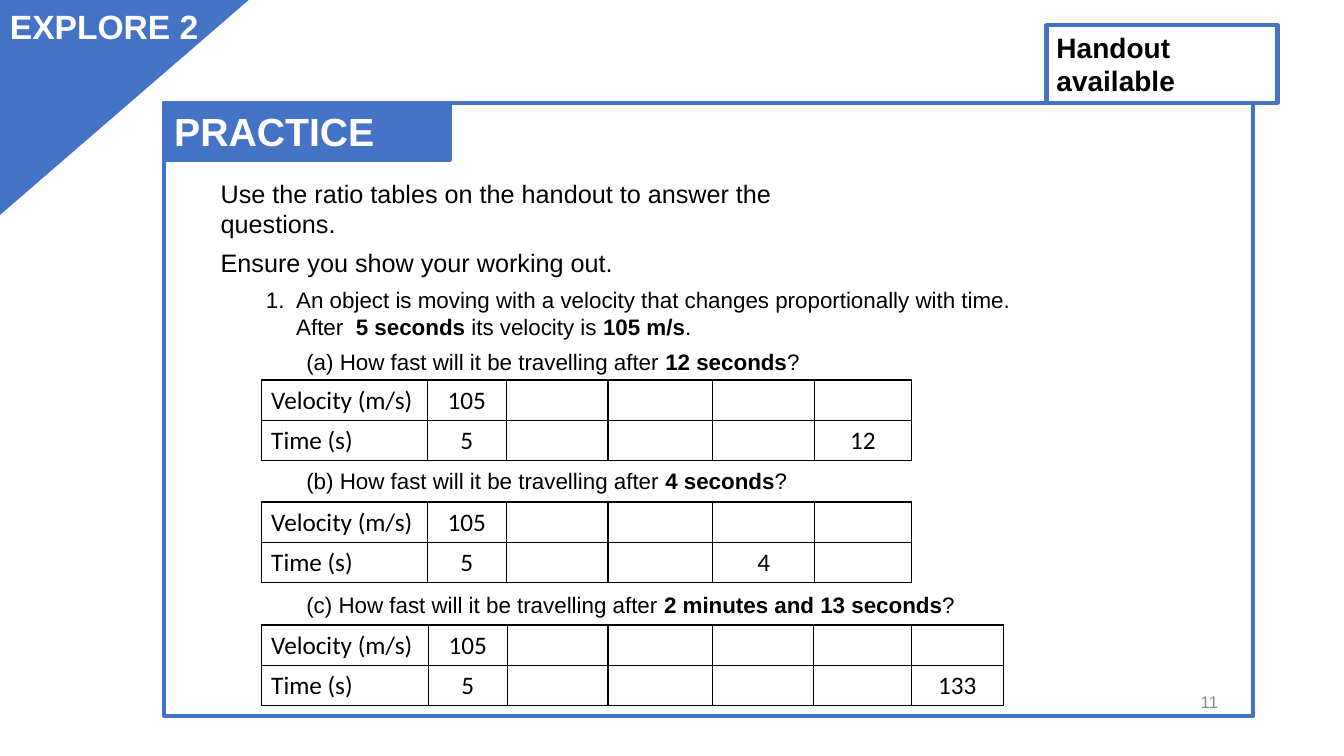
from lxml.etree import SubElement
from pptx import Presentation
from pptx.dml.color import RGBColor
from pptx.enum.shapes import MSO_SHAPE as Preset
from pptx.enum.text import MSO_ANCHOR as Anchor, PP_ALIGN as Align
from pptx.oxml.ns import qn
from pptx.util import Inches, Pt

BLUE, BLACK, WHITE, GREY = "4472C4", "000000", "FFFFFF", "8C8C8C"

CORNER = (-0.03, -0.02, 2.51, 2.17)
HANDOUT = (10.38, 0.25, 2.29, 0.77)
BANNER = (1.63, 1.02, 2.83, 0.57)
FRAME = (1.63, 1.02, 10.8, 6.08)

INTRO = [
    ["Use the ratio tables on the handout to answer the questions."],
    ["Ensure you show your working out."],
]
PROBLEM = [[
    "An object is moving with a velocity that changes proportionally with time. After  ",
    "5 seconds ", "its velocity is ", "105 m/s", ".",
]]
ASK = "How fast will it be travelling after "
SHORT_COLUMNS = [1.65, 0.78, 1.01, 1.04, 1.01, 0.96]
LONG_COLUMNS = [1.66, 0.78, 1, 1.04, 1, 0.97, 0.91]
ROW_LABELS = [("Velocity (m/s)", "105"), ("Time (s)", "5")]
QUESTIONS = [
    {"letter": "(a) ", "time": "12 seconds", "top": 3.4, "table_top": 3.77,
     "columns": SHORT_COLUMNS, "goal": (5, "12")},
    {"letter": "(b) ", "time": "4 seconds", "top": 4.59, "table_top": 4.98,
     "columns": SHORT_COLUMNS, "goal": (4, "4")},
    {"letter": "(c) ", "time": "2 minutes and 13 seconds", "top": 5.82, "table_top": 6.2,
     "columns": LONG_COLUMNS, "goal": (6, "133")},
]
TABLE_LEFT, ROW_HEIGHT = 2.59, 0.4


def color(value):
    return RGBColor.from_string(value)


def place(area):
    return [Inches(length) for length in area]


def style(span, size, ink, bold=False, font="Arial"):
    span.font.name = font
    span.font.size = Pt(size)
    span.font.bold = bold
    span.font.color.rgb = color(ink)


def write(box, paragraphs, size, ink=BLACK, bold=False, after=0, align=Align.LEFT):
    frame = box.text_frame
    frame.word_wrap = True
    for number, parts in enumerate(paragraphs):
        para = frame.add_paragraph() if number else frame.paragraphs[0]
        para.alignment = align
        para.space_after = Pt(after)
        for index, part in enumerate(parts):
            for line_number, line in enumerate(part.split("\n")):
                if line_number:
                    para.add_line_break()
                span = para.add_run()
                span.text = line
                style(span, size, ink, bold or index % 2 == 1)
    return box


def add_text(page, area, paragraphs, size, **options):
    return write(page.shapes.add_textbox(*place(area)), paragraphs, size, **options)


def add_panel(page, preset, area, filled, width=3):
    panel = page.shapes.add_shape(preset, *place(area))
    panel.shadow.inherit = False
    panel.line.color.rgb = color(BLUE)
    panel.line.width = Pt(width)
    if filled:
        panel.fill.solid()
        panel.fill.fore_color.rgb = color(BLUE)
    else:
        panel.fill.background()
    panel.text_frame.vertical_anchor = Anchor.TOP
    return panel


def indent(box, left, hanging, numbered=False):
    properties = box.text_frame.paragraphs[0]._p.get_or_add_pPr()
    properties.set("marL", str(Inches(left)))
    properties.set("indent", str(-Inches(hanging)))
    if numbered:
        SubElement(properties, qn("a:buFont"), typeface="+mj-lt")
        SubElement(properties, qn("a:buAutoNum"), type="arabicPeriod")


def border(cell):
    properties = cell._tc.get_or_add_tcPr()
    for position, side in enumerate(("a:lnL", "a:lnR", "a:lnT", "a:lnB")):
        line = SubElement(properties, qn(side), w=str(Pt(1)))
        fill = SubElement(line, qn("a:solidFill"))
        SubElement(fill, qn("a:srgbClr"), val=BLACK)
        properties.insert(position, line)


def add_ratio_table(page, top, columns, goal):
    goal_column, goal_value = goal
    values = {(row, column): text for row, pair in enumerate(ROW_LABELS)
              for column, text in enumerate(pair)}
    values[1, goal_column] = goal_value
    area = (TABLE_LEFT, top, sum(columns), 2 * ROW_HEIGHT)
    table = page.shapes.add_table(2, len(columns), *place(area)).table
    table.first_row = table.horz_banding = False
    for column, width in enumerate(columns):
        table.columns[column].width = Inches(width)
        for row in range(2):
            cell = table.cell(row, column)
            cell.fill.background()
            border(cell)
            para = cell.text_frame.paragraphs[0]
            para.alignment = Align.CENTER if column else Align.LEFT
            if (row, column) in values:
                para.text = values[row, column]
                style(para.runs[0], 18, BLACK, font="Calibri")


def main():
    deck = Presentation()
    deck.slide_width, deck.slide_height = Inches(13.33), Inches(7.5)
    page = deck.slides.add_slide(deck.slide_layouts[6])

    number = add_text(page, (9.18, 6.76, 3, 0.4), [["11"]], 12, ink=GREY, align=Align.RIGHT)
    number.text_frame.vertical_anchor = Anchor.MIDDLE

    corner = add_panel(page, Preset.ISOSCELES_TRIANGLE, CORNER, True, 1)
    corner.adjustments[0] = 0
    corner._element.spPr.xfrm.set("flipV", "1")
    add_text(page, (0, 0.01, 2.13, 0.5), [["EXPLORE 2"]], 24, ink=WHITE, bold=True)

    write(add_panel(page, Preset.RECTANGLE, HANDOUT, False),
          [["Handout\navailable"]], 20, bold=True)
    write(add_panel(page, Preset.RECTANGLE, BANNER, True),
          [["PRACTICE"]], 28, ink=WHITE, bold=True)
    add_panel(page, Preset.RECTANGLE, FRAME, False)

    add_text(page, (2.09, 1.72, 6.61, 1.09), INTRO, 18, after=6)
    problem = add_text(page, (2.46, 2.79, 7.85, 0.64), PROBLEM, 16, after=6)
    indent(problem, 0.38, 0.3, numbered=True)

    for question in QUESTIONS:
        parts = [question["letter"] + ASK, question["time"], "?"]
        box = add_text(page, (2.94, question["top"], 8.23, 0.37), [parts], 16, after=6)
        indent(box, 0.25, 0.25)
        add_ratio_table(page, question["table_top"], question["columns"], question["goal"])

    deck.save("out.pptx")


if __name__ == "__main__":
    main()
